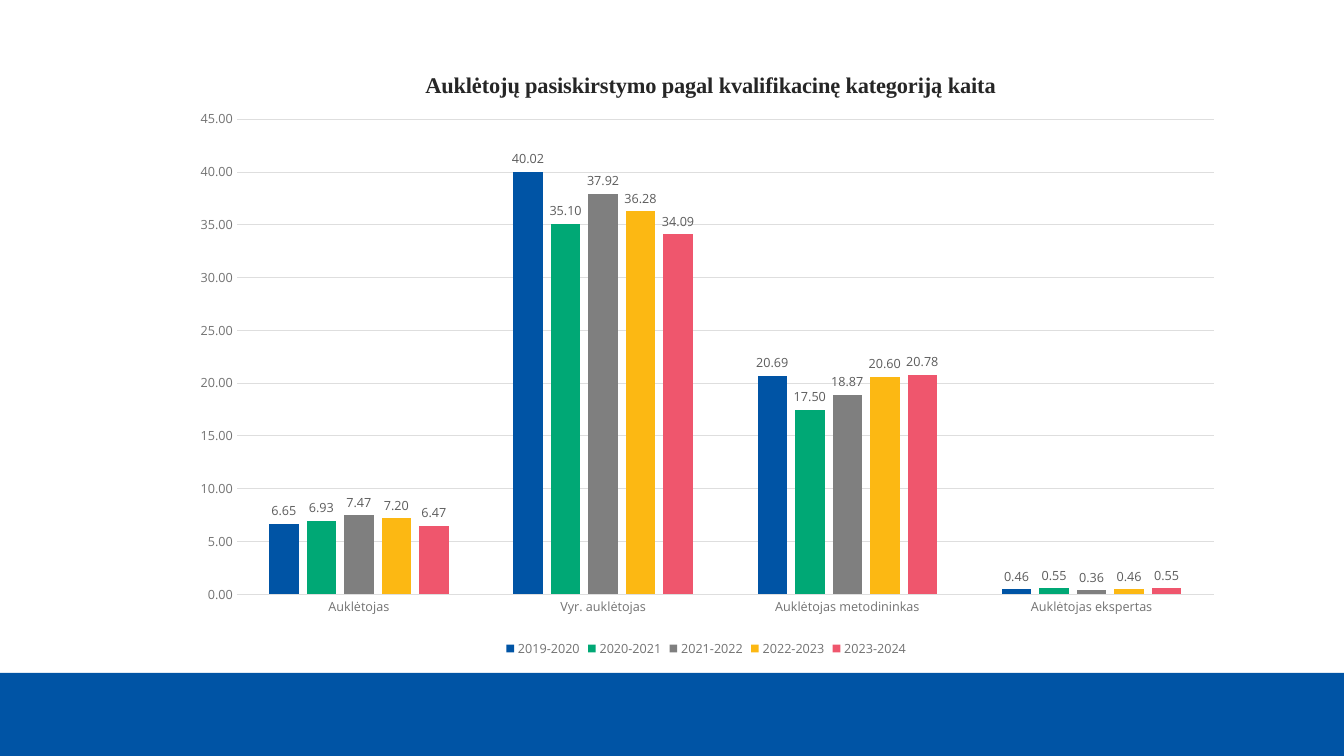
import pptx
import pptx.chart.data
import pptx.dml.color
import pptx.enum.chart
import pptx.enum.shapes
import pptx.oxml
import pptx.oxml.ns
import pptx.util

WIDTH = pptx.util.Inches(13.33)
HEIGHT = pptx.util.Inches(7.5)
BODY_FONT = "Open Sans"
NUMBER_FORMAT = "#,##0.00"
GRID_COLOUR = "DEDEDE"
AXIS_COLOUR = "727272"

TITLE = "Auklėtojų pasiskirstymo pagal kvalifikacinę kategoriją kaita"
CATEGORIES = ["Auklėtojas", "Vyr. auklėtojas", "Auklėtojas metodininkas", "Auklėtojas ekspertas"]
SCHOOL_YEARS = [
    ("2019-2020", "0054A5", (6.65, 40.02, 20.69, 0.46)),
    ("2020-2021", "00A875", (6.93, 35.10, 17.50, 0.55)),
    ("2021-2022", "7F7F7F", (7.47, 37.92, 18.87, 0.36)),
    ("2022-2023", "FCB813", (7.20, 36.28, 20.60, 0.46)),
    ("2023-2024", "EF566D", (6.47, 34.09, 20.78, 0.55)),
]


def colour(hex_text):
    return pptx.dml.color.RGBColor.from_string(hex_text)


def style_font(font, size, hex_text, name=BODY_FONT, bold=False):
    font.size = pptx.util.Pt(size)
    font.color.rgb = colour(hex_text)
    font.name = name
    font.bold = bold


def style_line(line, hex_text):
    line.color.rgb = colour(hex_text)
    line.width = pptx.util.Pt(0.75)


def place_part(element, index, **shares):
    """Place a chart part by shares of the chart's size."""
    for old_layout in element.findall(pptx.oxml.ns.qn("c:layout")):
        element.remove(old_layout)
    target = '<c:layoutTarget val="inner"/>' if "w" in shares else ""
    modes = "".join(f'<c:{key}Mode val="edge"/>' for key in ("x", "y"))
    values = "".join(f'<c:{key} val="{share}"/>' for key, share in shares.items())
    element.insert(index, pptx.oxml.parse_xml(
        f'<c:layout {pptx.oxml.ns.nsdecls("c")}><c:manualLayout>'
        f"{target}{modes}{values}</c:manualLayout></c:layout>"))


def add_band(slide, top, height, hex_text):
    band = slide.shapes.add_shape(
        pptx.enum.shapes.MSO_SHAPE.RECTANGLE, 0, int(HEIGHT * top), WIDTH, int(HEIGHT * height))
    band.shadow.inherit = False
    band.fill.solid()
    band.fill.fore_color.rgb = colour(hex_text)
    band.line.fill.background()


def add_column_chart(slide, left, top, width, height):
    data = pptx.chart.data.CategoryChartData(number_format=NUMBER_FORMAT)
    data.categories = CATEGORIES
    for name, _, values in SCHOOL_YEARS:
        data.add_series(name, values)
    chart = slide.shapes.add_chart(
        pptx.enum.chart.XL_CHART_TYPE.COLUMN_CLUSTERED,
        int(WIDTH * left), int(HEIGHT * top), int(WIDTH * width), int(HEIGHT * height), data).chart
    style_font(chart.font, 10, "262626")
    return chart


def format_title(chart):
    run = chart.chart_title.text_frame.paragraphs[0].add_run()
    run.text = TITLE
    style_font(run.font, 16, "262626", "Times New Roman", True)
    chart.chart_title.include_in_layout = False
    place_part(chart.chart_title._element, 1, x=0.23, y=0.035)


def format_axes(chart):
    for axis in (chart.category_axis, chart.value_axis):
        axis.major_tick_mark = pptx.enum.chart.XL_TICK_MARK.NONE
        axis.minor_tick_mark = pptx.enum.chart.XL_TICK_MARK.NONE
        style_font(axis.tick_labels.font, 9, AXIS_COLOUR)
    style_line(chart.category_axis.format.line, GRID_COLOUR)
    value_axis = chart.value_axis
    value_axis.minimum_scale, value_axis.maximum_scale, value_axis.major_unit = 0, 45, 5
    value_axis.format.line.fill.background()
    style_line(value_axis.major_gridlines.format.line, GRID_COLOUR)
    value_axis.tick_labels.number_format = NUMBER_FORMAT
    value_axis.tick_labels.number_format_is_linked = False


def format_columns(chart):
    plot = chart.plots[0]
    plot.gap_width = 219
    plot.overlap = -27
    plot.vary_by_categories = False
    for series, (_, hex_text, _) in zip(plot.series, SCHOOL_YEARS):
        series.format.fill.solid()
        series.format.fill.fore_color.rgb = colour(hex_text)
        series.invert_if_negative = False
        labels = series.data_labels
        labels.show_value = True
        labels.number_format = NUMBER_FORMAT
        labels.number_format_is_linked = False
        labels.position = pptx.enum.chart.XL_LABEL_POSITION.OUTSIDE_END
        style_font(labels.font, 9, "5C5C5C")
    place_part(chart._chartSpace.chart.plotArea, 0, x=0.055, y=0.12, w=0.926, h=0.771)


def format_legend(chart):
    chart.has_legend = True
    chart.legend.position = pptx.enum.chart.XL_LEGEND_POSITION.BOTTOM
    chart.legend.include_in_layout = False
    style_font(chart.legend.font, 9, AXIS_COLOUR)


def main():
    presentation = pptx.Presentation()
    presentation.slide_width = WIDTH
    presentation.slide_height = HEIGHT
    slide = presentation.slides.add_slide(presentation.slide_layouts[6])

    # Footer band
    add_band(slide, 0.89, 0.11, "0054A5")

    # Chart of qualification categories by school year
    chart = add_column_chart(slide, 0.133, 0.06, 0.785, 0.815)
    format_title(chart)
    format_axes(chart)
    format_columns(chart)
    format_legend(chart)

    presentation.save("out.pptx")


if __name__ == "__main__":
    main()
